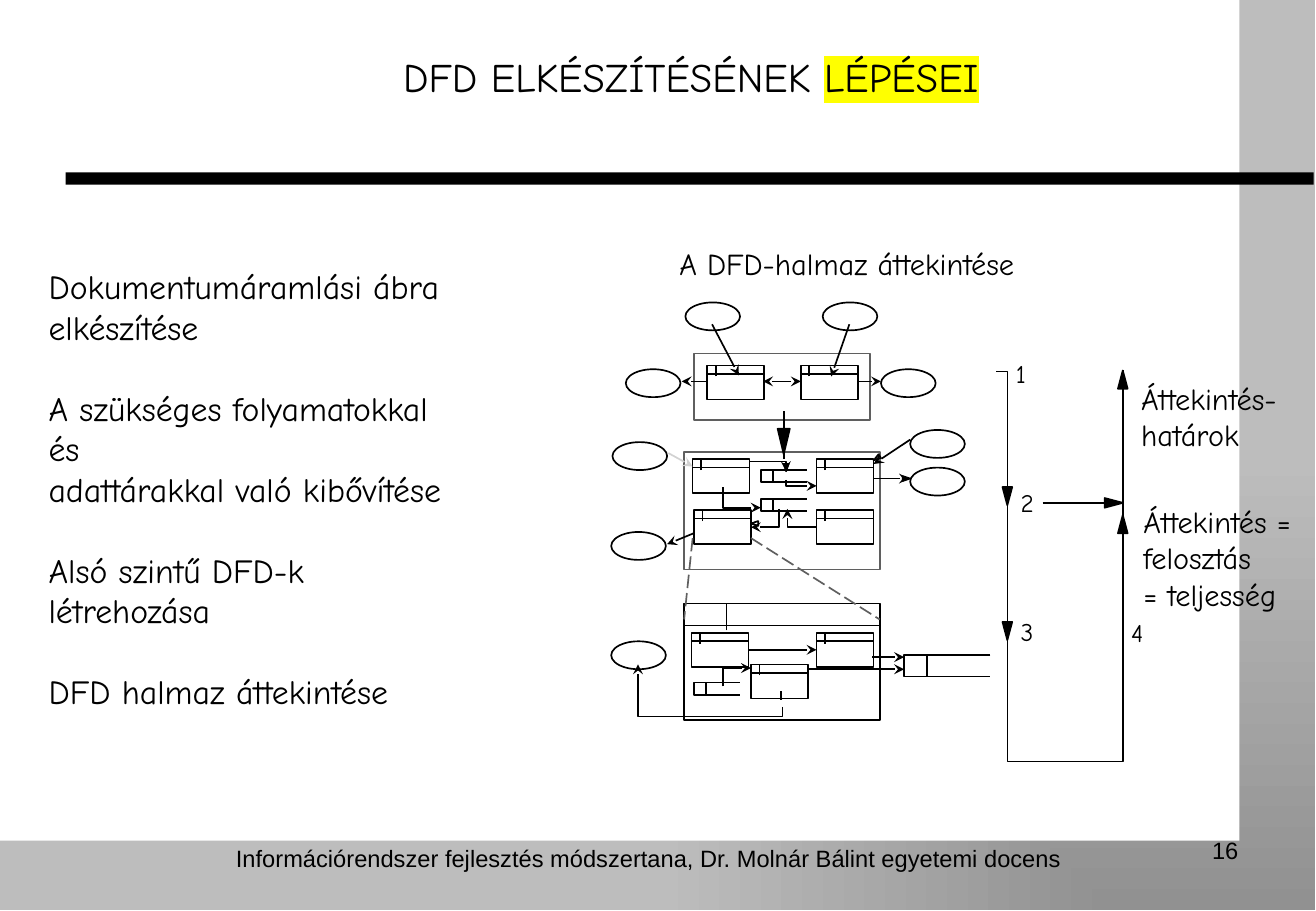
from dataclasses import dataclass

import lxml.etree
import pptx
import pptx.dml.color
import pptx.enum.dml
import pptx.enum.shapes
import pptx.enum.text
import pptx.oxml.ns
import pptx.util

BLACK, GREY, PALE = "000000", "5F5F5F", "D2D2D2"
HAND, SANS = "Comic Neue", "Arial"
ALIGN = pptx.enum.text.PP_ALIGN
SHAPE = pptx.enum.shapes.MSO_SHAPE
PLAIN_FRAME = {"margin_left": 0, "margin_top": 0, "margin_right": 0, "margin_bottom": 0,
               "word_wrap": True, "auto_size": pptx.enum.text.MSO_AUTO_SIZE.NONE,
               "vertical_anchor": pptx.enum.text.MSO_ANCHOR.TOP}
FOOTER_FRAME = {"word_wrap": True}
DOWN, UP, LEFT, RIGHT = (0, 1), (0, -1), (-1, 0), (1, 0)
PROCESS_SIZE, OVAL_SIZE = (0.47, 0.28), (0.45, 0.23)


@dataclass(frozen=True)
class Label:
    """Groups of paragraphs; every group after the first stands one line lower."""
    box: tuple
    groups: tuple
    size: int = 18
    font: str = HAND
    align: ALIGN = ALIGN.LEFT


@dataclass(frozen=True)
class Flow:
    points: tuple
    tail: bool = True
    head: bool = False
    colour: str = BLACK
    dashed: bool = False


@dataclass(frozen=True)
class Wedge:
    """A triangle that points at its tip."""
    tip: tuple
    direction: tuple
    length: float = 0.15
    half_width: float = 0.04
    filled: bool = True


@dataclass(frozen=True)
class Store:
    left: float
    top: float
    width: float = 0.38
    height: float = 0.1
    divider: float = 0.1


TITLE = Label((1.09, 0.43, 9.19, 0.32), (("DFD ELKÉSZÍTÉSÉNEK ",),), 24, align=ALIGN.CENTER)
FOOTERS = (
    Label((1.56, 6.9, 7.56, 0.6),
          (("Információrendszer fejlesztés módszertana, Dr. Molnár Bálint egyetemi docens",),),
          14, SANS, ALIGN.CENTER),
    Label((7.76, 6.83, 2.53, 0.52), (("16",),), 14, SANS, ALIGN.RIGHT),
)
LABELS = (
    Label((0.4, 2.19, 3.43, 3.48),
          (("Dokumentumáramlási ábra", "elkészítése"),
           ("A szükséges folyamatokkal és", "adattárakkal való kibővítése"),
           ("Alsó szintű DFD-k létrehozása",), ("DFD halmaz áttekintése",)), 20),
    Label((5.59, 2.02, 3.08, 0.28), (("A DFD-halmaz áttekintése",),)),
    Label((9.39, 3.13, 1.18, 0.73), (("Áttekintés-határok",),)),
    Label((9.41, 4.14, 1.34, 1.11), (("Áttekintés = felosztás", "= teljesség"),)),
    *(Label((left, top, 0.14, 0.28), ((str(number),),), 15) for number, (left, top)
      in enumerate(((8.36, 2.95), (8.4, 4.01), (8.4, 5.07), (9.31, 5.08)), 1)),
)
FRAMES = (((5.71, 2.91, 1.45, 0.55), GREY), ((5.63, 3.72, 1.61, 0.97), GREY),
          ((5.63, 4.97, 1.61, 0.96), BLACK))
PROCESSES = ((5.82, 3.01), (6.59, 3.01), (5.7, 3.78), (6.72, 3.78), (5.71, 4.2),
             (6.72, 4.2), (5.69, 5.21), (6.72, 5.21), (6.18, 5.47))
OVALS = ((5.64, 2.49), (6.77, 2.49), (5.15, 3.04), (7.25, 3.04), (5.04, 3.64),
         (7.49, 3.54), (7.49, 3.85), (5.03, 4.38), (5.03, 5.28))
STORES = (Store(6.26, 3.87), Store(6.26, 4.11), Store(5.71, 5.62),
          Store(7.44, 5.39, 0.71, 0.18, 0.19))
FLOWS = (
    # Top level
    Flow(((5.86, 2.67), (6.08, 3.09))),
    Flow(((6.99, 2.67), (6.84, 3.1))),
    Flow(((6.59, 3.14), (6.28, 3.14)), head=True),
    Flow(((5.82, 3.14), (5.61, 3.14))),
    Flow(((7.06, 3.14), (7.25, 3.14))),
    Flow(((6.45, 3.78), (6.45, 3.38)), tail=False),
    # Middle level
    Flow(((6.47, 3.95), (6.47, 4), (6.72, 4))),
    Flow(((6.17, 3.8), (6.47, 3.8), (6.47, 3.88))),
    Flow(((6.41, 4.19), (6.41, 4.34), (6.18, 4.34))),
    Flow(((6.72, 4.34), (6.48, 4.34), (6.48, 4.19))),
    Flow(((5.95, 4.01), (5.95, 4.18), (6.26, 4.18))),
    Flow(((5.71, 4.39), (5.49, 4.48))),
    Flow(((5.5, 3.73), (5.7, 3.84)), colour=PALE),
    Flow(((7.19, 3.94), (7.48, 3.94))),
    Flow(((7.49, 3.62), (7.19, 3.82))),
    Flow(((7.19, 3.79), (7.25, 3.77), (7.23, 3.74), (7.19, 3.79)), tail=False),
    # Bottom level
    Flow(((5.7, 4.43), (5.63, 5.1)), tail=False, colour=GREY, dashed=True),
    Flow(((6.18, 4.43), (7.24, 5.1)), tail=False, colour=GREY, dashed=True),
    Flow(((5.64, 5.15), (7.25, 5.15)), tail=False),
    Flow(((5.98, 5.19), (5.98, 4.97)), tail=False),
    Flow(((5.95, 5.65), (5.95, 5.5), (6.18, 5.5))),
    Flow(((6.44, 5.82), (6.44, 5.9), (5.25, 5.9), (5.25, 5.47))),
    Flow(((6.43, 5.76), (6.43, 5.69)), tail=False),
    Flow(((6.16, 5.35), (6.72, 5.35))),
    Flow(((6.65, 5.51), (7.44, 5.51))),
    Flow(((7.18, 5.41), (7.44, 5.41))),
    # Order of the steps
    Flow(((9.24, 3.05), (9.24, 4.4)), tail=False),
    Flow(((9.24, 4.25), (9.24, 6.27), (8.29, 6.27), (8.29, 4.22)), tail=False),
    Flow(((8.2, 3.06), (8.29, 3.06), (8.29, 4.4)), tail=False),
    Flow(((8.58, 4.14), (9.24, 4.14)), tail=False),
)
WEDGES = (
    Wedge((6.45, 3.74), DOWN, 0.21, 0.05), Wedge((8.29, 4.16), DOWN), Wedge((8.29, 5.27), DOWN),
    Wedge((9.24, 3.05), UP), Wedge((9.24, 4.24), UP), Wedge((9.24, 4.14), RIGHT),
    Wedge((6.47, 3.88), DOWN, 0.06, 0.02, False), Wedge((6.18, 4.31), LEFT, 0.06, 0.02, False),
    Wedge((7.49, 3.94), RIGHT, 0.06, 0.02, False),
)


def inch(value: float) -> pptx.util.Cm:
    return pptx.util.Cm(value * 2.54)


def rgb(colour: str) -> pptx.dml.color.RGBColor:
    return pptx.dml.color.RGBColor.from_string(colour)


def add_element(parent, tag: str, **attributes: str):
    return lxml.etree.SubElement(parent, pptx.oxml.ns.qn(tag), attributes)


def style_line(shape, colour: str = BLACK) -> None:
    shape.line.color.rgb = rgb(colour)
    shape.line.width = pptx.util.Pt(1)


def add_preset(page, kind: SHAPE, box: tuple, fill: str = "", line: str = ""):
    shape = page.shapes.add_shape(kind, *map(inch, box))
    shape.shadow.inherit = False
    if fill:
        shape.fill.solid()
        shape.fill.fore_color.rgb = rgb(fill)
    else:
        shape.fill.background()
    if line:
        style_line(shape, line)
    else:
        shape.line.fill.background()
    return shape


def add_background(page) -> None:
    shade = add_preset(page, SHAPE.RECTANGLE, (0, 0, 10.82, 7.49))
    shade.fill.gradient()
    for stop, colour in zip(shade.fill.gradient_stops, ("919191", "BDBDBD")):
        stop.color.rgb = rgb(colour)
    gradient = shade._element.spPr.find(pptx.oxml.ns.qn("a:gradFill"))
    gradient.remove(gradient.find(pptx.oxml.ns.qn("a:lin")))
    focus = add_element(gradient, "a:path", path="rect")
    add_element(focus, "a:fillToRect", l="100000", t="100000")
    add_preset(page, SHAPE.RECTANGLE, (0, 0, 10.2, 6.92), "FFFFFF")
    add_preset(page, SHAPE.RECTANGLE, (0.54, 1.42, 10.27, 0.1), BLACK)


def add_span(para, text: str, label: Label):
    span = para.add_run()
    span.text = text
    span.font.color.rgb = rgb(BLACK)
    for name, value in {"name": label.font, "size": pptx.util.Pt(label.size)}.items():
        setattr(span.font, name, value)
    return span


def write_label(box, label: Label, frame_format: dict) -> None:
    for name, value in frame_format.items():
        setattr(box.text_frame, name, value)
    para = box.text_frame.paragraphs[0]
    for group_index, group in enumerate(label.groups):
        for line_index, text in enumerate(group):
            if group_index or line_index:
                para = box.text_frame.add_paragraph()
            if group_index and not line_index:
                para.space_before = pptx.util.Pt(label.size * 1.2)
            para.alignment = label.align
            add_span(para, text, label)


def add_title(page) -> None:
    title = page.shapes.title
    page.shapes._spTree.append(title._element)
    for name, value in zip(("left", "top", "width", "height"), TITLE.box):
        setattr(title, name, inch(value))
    write_label(title, TITLE, PLAIN_FRAME)
    span = add_span(title.text_frame.paragraphs[0], "LÉPÉSEI", TITLE)
    properties = span.font._element
    highlight = add_element(properties, "a:highlight")
    add_element(highlight, "a:srgbClr", val="FFFF00")
    properties.find(pptx.oxml.ns.qn("a:solidFill")).addnext(highlight)


def add_flow(page, flow: Flow, filled: bool = False) -> None:
    points = [(inch(x), inch(y)) for x, y in flow.points]
    if len(points) == 2:
        shape = page.shapes.add_connector(pptx.enum.shapes.MSO_CONNECTOR.STRAIGHT,
                                          *points[0], *points[1])
    else:
        builder = page.shapes.build_freeform(*points[0])
        builder.add_line_segments(points[1:], close=points[0] == points[-1])
        shape = builder.convert_to_shape()
        if filled:
            shape.fill.solid()
            shape.fill.fore_color.rgb = rgb(flow.colour)
        else:
            shape.fill.background()
    style_line(shape, flow.colour)
    if flow.dashed:
        shape.line.dash_style = pptx.enum.dml.MSO_LINE.LONG_DASH
    line = shape._element.spPr.find(pptx.oxml.ns.qn("a:ln"))
    for wanted, tag in ((flow.head, "a:headEnd"), (flow.tail, "a:tailEnd")):
        if wanted:
            add_element(line, tag, type="stealth")
    add_element(shape._element.spPr, "a:effectLst")


def add_rule(page, *points: tuple) -> None:
    add_flow(page, Flow(points, tail=False))


def add_process(page, left: float, top: float) -> None:
    width, height = PROCESS_SIZE
    add_preset(page, SHAPE.RECTANGLE, (left, top, width, height), line=BLACK)
    add_rule(page, (left, top + 0.07), (left + width, top + 0.07))
    add_rule(page, (left + 0.07, top + 0.09), (left + 0.07, top))


def add_store(page, store: Store) -> None:
    right, bottom = store.left + store.width, store.top + store.height
    add_rule(page, (right, store.top), (store.left, store.top), (store.left, bottom),
             (right, bottom))
    add_rule(page, (store.left + store.divider, bottom), (store.left + store.divider, store.top))


def add_wedge(page, wedge: Wedge) -> None:
    (x, y), (dx, dy) = wedge.tip, wedge.direction
    base_x, base_y = x - dx * wedge.length, y - dy * wedge.length
    side_x, side_y = dy * wedge.half_width, dx * wedge.half_width
    corners = (wedge.tip, (base_x + side_x, base_y + side_y),
               (base_x - side_x, base_y - side_y), wedge.tip)
    add_flow(page, Flow(corners, tail=False), wedge.filled)


def main() -> None:
    deck = pptx.Presentation()
    deck.slide_width, deck.slide_height = inch(10.83), inch(7.5)
    page = deck.slides.add_slide(deck.slide_layouts.get_by_name("Title Only"))
    add_background(page)
    add_title(page)
    for labels, frame_format in ((FOOTERS, FOOTER_FRAME), (LABELS, PLAIN_FRAME)):
        for label in labels:
            write_label(page.shapes.add_textbox(*map(inch, label.box)), label, frame_format)
    for box, colour in FRAMES:
        add_preset(page, SHAPE.RECTANGLE, box, line=colour)
    for left, top in OVALS:
        add_preset(page, SHAPE.OVAL, (left, top, *OVAL_SIZE), line=BLACK)
    for left, top in PROCESSES:
        add_process(page, left, top)
    for store in STORES:
        add_store(page, store)
    for flow in FLOWS:
        add_flow(page, flow)
    for wedge in WEDGES:
        add_wedge(page, wedge)
    deck.save("out.pptx")


if __name__ == "__main__":
    main()
